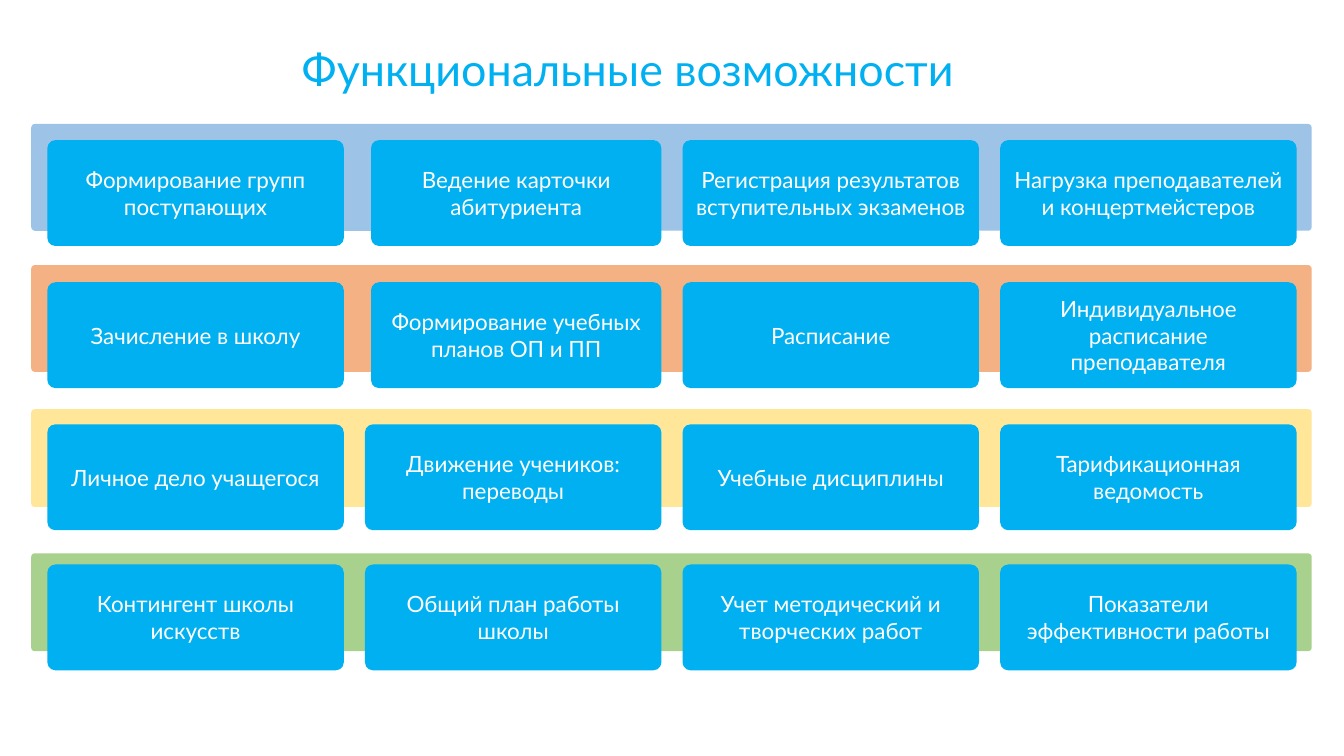
"""Build the slide of functional capabilities: four colour bands with four cards each."""
from pptx import Presentation
from pptx.dml.color import RGBColor
from pptx.enum.shapes import MSO_SHAPE
from pptx.enum.text import MSO_ANCHOR, MSO_AUTO_SIZE, PP_ALIGN
from pptx.util import Inches, Pt

BLUE = RGBColor(0x00, 0xB0, 0xF0)
WHITE = RGBColor(0xFF, 0xFF, 0xFF)
PALE_BLUE = RGBColor(0x9D, 0xC3, 0xE6)
ORANGE = RGBColor(0xF4, 0xB1, 0x83)
YELLOW = RGBColor(0xFF, 0xE6, 0x99)
GREEN = RGBColor(0xA9, 0xD1, 0x8E)

CARD_LEFT, CARD_STEP, CARD_W, CARD_H = 0.47, 3.15, 2.94, 1.05
NARROW_BY = 0.06

ROWS = [
    dict(color=PALE_BLUE, band_top=1.23, band_h=1.06, card_top=1.39, narrow=True, cards=[
        "Формирование групп поступающих", "Ведение карточки абитуриента",
        "Регистрация результатов вступительных экзаменов",
        "Нагрузка преподавателей и концертмейстеров"]),
    dict(color=ORANGE, band_top=2.63, band_h=1.06, card_top=2.8, narrow=True, cards=[
        "Зачисление в школу", "Формирование учебных планов ОП и ПП",
        "Расписание", "Индивидуальное расписание преподавателя"]),
    dict(color=YELLOW, band_top=4.06, band_h=0.97, card_top=4.21, narrow=False, cards=[
        "Личное дело учащегося", "Движение учеников: переводы",
        "Учебные дисциплины", "Тарификационная ведомость"]),
    dict(color=GREEN, band_top=5.49, band_h=0.97, card_top=5.6, narrow=False, cards=[
        "Контингент школы искусств", "Общий план работы школы",
        "Учет методический и творческих работ", "Показатели эффективности работы"]),
]


def add_box(left, top, width, height, color, radius):
    sp = s.shapes.add_shape(MSO_SHAPE.ROUNDED_RECTANGLE, Inches(left), Inches(top),
                            Inches(width), Inches(height))
    sp.adjustments[0] = radius
    sp.shadow.inherit = False
    sp.fill.solid()
    sp.fill.fore_color.rgb = color
    sp.line.fill.background()
    return sp


def write(sp, text, size, color):
    tf = sp.text_frame
    frame = dict(word_wrap=True, vertical_anchor=MSO_ANCHOR.MIDDLE, auto_size=MSO_AUTO_SIZE.NONE)
    for name, value in frame.items():
        setattr(tf, name, value)
    p = tf.paragraphs[0]
    p.alignment = PP_ALIGN.CENTER
    r = p.add_run()
    r.text = text
    for name, value in dict(name="Lato", size=Pt(size)).items():
        setattr(r.font, name, value)
    r.font.color.rgb = color


prs = Presentation()
prs.slide_width, prs.slide_height = Inches(13.33), Inches(7.5)
s = prs.slides.add_slide(prs.slide_layouts[5])

title = s.shapes.title
for name, value in dict(left=0.4, top=0.36, width=11.66, height=0.64).items():
    setattr(title, name, Inches(value))
write(title, "Функциональные возможности", 32, BLUE)

for row in ROWS:
    add_box(0.31, row["band_top"], 12.7, row["band_h"], row["color"], 0.035)
    for col, text in enumerate(row["cards"]):
        inset = NARROW_BY if row["narrow"] and col == 1 else 0
        card = add_box(CARD_LEFT + col * CARD_STEP + inset, row["card_top"],
                       CARD_W - inset, CARD_H, BLUE, 0.075)
        write(card, text, 16, WHITE)

prs.save("out.pptx")
